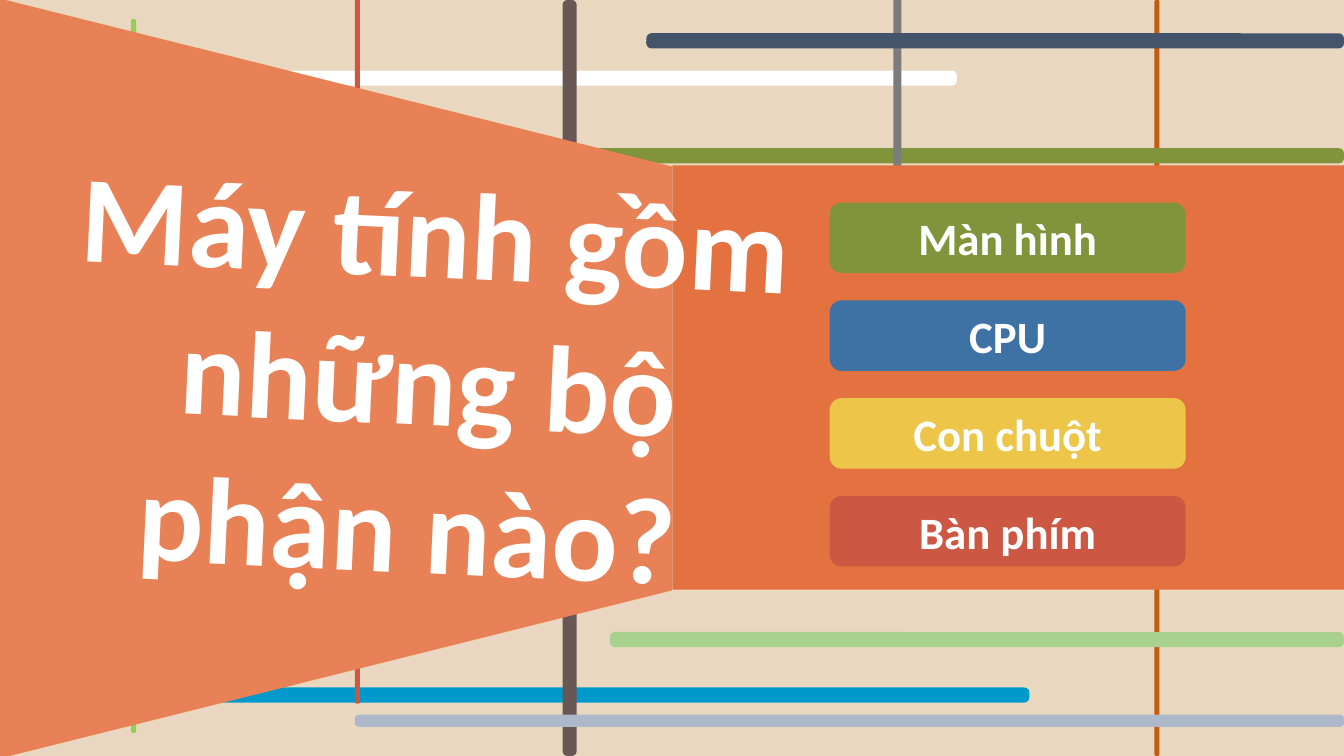
"""Build a quiz slide asking which parts make up a computer."""
from dataclasses import dataclass

from pptx import Presentation
from pptx.dml.color import RGBColor
from pptx.enum.shapes import MSO_SHAPE
from pptx.enum.text import MSO_ANCHOR, PP_ALIGN
from pptx.shapes.autoshape import Shape
from pptx.slide import Slide
from pptx.text.text import TextFrame
from pptx.util import Inches, Pt

COLORS = {
    "sand": "E9D7BF", "lime": "92D050", "white": "FFFFFF", "rust": "C55A11",
    "cyan": "0099CC", "brown": "695755", "olive": "81943B", "red": "CC5843",
    "mint": "A9D18E", "gray": "7C7C7C", "navy": "44546A", "mist": "ADB9CA",
    "orange": "E47240", "coral": "E88156", "blue": "3E72A5", "yellow": "ECC549",
}
FONT = "Calibri"
SLIDE_WIDTH, SLIDE_HEIGHT = 13.33, 7.5


@dataclass(frozen=True)
class Box:
    left: float
    top: float
    width: float
    height: float
    color: str


@dataclass(frozen=True)
class Answer:
    text: str
    color: str


BARS = [
    Box(1.3, 0.19, 0.05, 7.08, "lime"),
    Box(0, 0.7, 9.49, 0.15, "white"),
    Box(11.45, 0, 0.05, 7.5, "rust"),
    Box(0, 6.82, 10.21, 0.15, "cyan"),
    Box(5.58, 0, 0.14, 7.5, "brown"),
    Box(2.52, 1.47, 10.81, 0.15, "olive"),
    Box(3.52, -0.1, 0.05, 7.08, "red"),
    Box(6.05, 6.27, 7.28, 0.15, "mint"),
    Box(8.86, -0.1, 0.08, 4.61, "gray"),
    Box(6.41, 0.33, 6.92, 0.15, "navy"),
    Box(3.52, 7.09, 9.81, 0.12, "mist"),
]
ANSWERS = [
    Answer("Màn hình", "olive"),
    Answer("CPU", "blue"),
    Answer("Con chuột", "yellow"),
    Answer("Bàn phím", "red"),
]
ANSWER_TOP, ANSWER_STEP = 2.01, 0.97


def add_box(slide: Slide, kind: MSO_SHAPE, box: Box) -> Shape:
    shape = slide.shapes.add_shape(
        kind, Inches(box.left), Inches(box.top), Inches(box.width), Inches(box.height)
    )
    shape.shadow.inherit = False
    shape.fill.solid()
    shape.fill.fore_color.rgb = RGBColor.from_string(COLORS[box.color])
    shape.line.fill.background()
    return shape


def write_text(frame: TextFrame, text: str, size: int) -> None:
    frame.word_wrap = True
    paragraph = frame.paragraphs[0]
    paragraph.text = text
    paragraph.alignment = PP_ALIGN.CENTER
    paragraph.font.name = FONT
    paragraph.font.size = Pt(size)
    paragraph.font.bold = True
    paragraph.font.color.rgb = RGBColor.from_string(COLORS["white"])


def add_bar(slide: Slide, bar: Box) -> None:
    shape = add_box(slide, MSO_SHAPE.ROUNDED_RECTANGLE, bar)
    shape.adjustments[0] = 0.34


def add_question(slide: Slide) -> None:
    add_box(slide, MSO_SHAPE.RECTANGLE, Box(6.67, 1.64, 6.67, 4.21, "orange"))
    funnel = add_box(slide, MSO_SHAPE.TRAPEZOID, Box(-0.44, 0.42, 7.54, 6.67, "coral"))
    funnel.rotation = 90
    title = slide.shapes.add_textbox(Inches(0.54), Inches(1.49), Inches(7.42), Inches(4.54))
    title.rotation = 2.8
    write_text(title.text_frame, "Máy tính gồm những bộ phận nào? ", 88)


def add_answer(slide: Slide, index: int, answer: Answer) -> None:
    top = ANSWER_TOP + index * ANSWER_STEP
    button = add_box(
        slide, MSO_SHAPE.ROUNDED_RECTANGLE, Box(8.23, top, 3.53, 0.7, answer.color)
    )
    button.text_frame.vertical_anchor = MSO_ANCHOR.MIDDLE
    write_text(button.text_frame, answer.text, 32)


def main() -> None:
    presentation = Presentation()
    presentation.slide_width = Inches(SLIDE_WIDTH)
    presentation.slide_height = Inches(SLIDE_HEIGHT)
    slide = presentation.slides.add_slide(presentation.slide_layouts[6])
    add_box(slide, MSO_SHAPE.RECTANGLE, Box(0, 0, SLIDE_WIDTH, SLIDE_HEIGHT, "sand"))
    for bar in BARS:
        add_bar(slide, bar)
    add_question(slide)
    for index, answer in enumerate(ANSWERS):
        add_answer(slide, index, answer)
    presentation.save("out.pptx")


if __name__ == "__main__":
    main()
